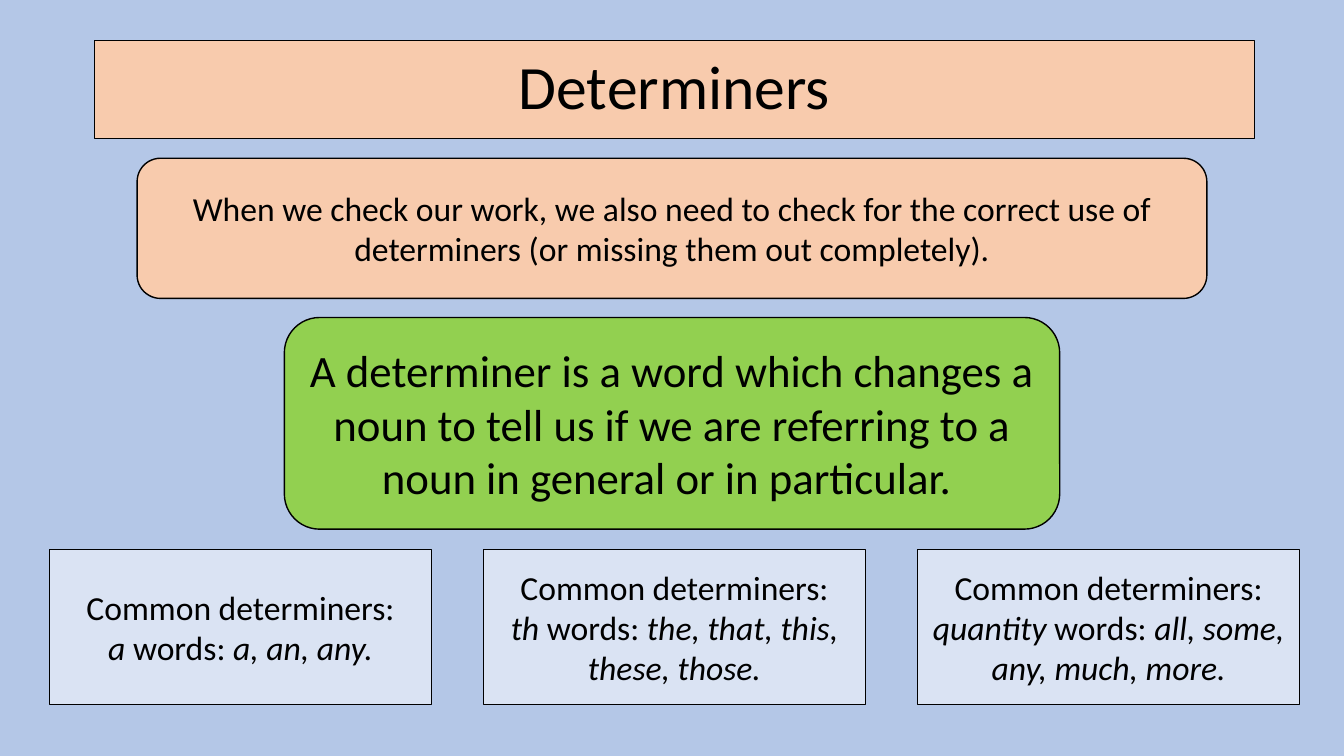
"""Build the Determiners slide."""
import pptx
import pptx.util
from pptx.dml.color import RGBColor
from pptx.enum.shapes import MSO_SHAPE
from pptx.enum.text import MSO_ANCHOR, PP_ALIGN
from pptx.util import Inches

BLACK = RGBColor(0x00, 0x00, 0x00)
SKY = RGBColor(0xB4, 0xC7, 0xE7)
PEACH = RGBColor(0xF8, 0xCB, 0xAD)
GREEN = RGBColor(0x92, 0xD0, 0x50)
PALE_BLUE = RGBColor(0xDA, 0xE3, 0xF3)

HEADING = "Determiners"
STATEMENTS = [
    ("When we check our work, we also need to check for the correct use of "
     "determiners (or missing them out completely).",
     (1.36, 1.57, 10.61, 1.39), PEACH, 24),
    ("A determiner is a word which changes a noun to tell us if we are "
     "referring to a noun in general or in particular. ",
     (2.82, 3.15, 7.69, 2.1), GREEN, 32),
]
EXAMPLE_HEADING = "Common determiners:"
EXAMPLES = [
    ("a", "a, an, any."),
    ("th", "the, that, this, these, those."),
    ("quantity", "all, some, any, much, more."),
]
EXAMPLE_LEFT, EXAMPLE_TOP = 0.49, 5.45
EXAMPLE_WIDTH, EXAMPLE_HEIGHT = 3.79, 1.54
EXAMPLE_STEP = 4.305


def style(box, fill, size, line_width=1):
    box.fill.solid()
    box.fill.fore_color.rgb = fill
    box.line.color.rgb = BLACK
    box.line.width = pptx.util.Pt(line_width)
    box.text_frame.word_wrap = True
    box.text_frame.vertical_anchor = MSO_ANCHOR.MIDDLE
    for paragraph in box.text_frame.paragraphs:
        paragraph.alignment = PP_ALIGN.CENTER
        for run in paragraph.runs:
            run.font.name = "Calibri"
            run.font.size = pptx.util.Pt(size)
            run.font.color.rgb = BLACK


def add_box(slide, preset, bounds, text):
    box = slide.shapes.add_shape(preset, *map(Inches, bounds))
    box.shadow.inherit = False
    box.text_frame.text = text
    return box


def main():
    deck = pptx.Presentation()
    deck.slide_width, deck.slide_height = Inches(13.33), Inches(7.5)
    slide = deck.slides.add_slide(deck.slide_layouts[5])
    slide.background.fill.solid()
    slide.background.fill.fore_color.rgb = SKY

    title = slide.shapes.title
    title.left, title.top = Inches(0.94), Inches(0.4)
    title.width, title.height = Inches(11.5), Inches(0.97)
    title.text_frame.text = HEADING
    title.text_frame.paragraphs[0].line_spacing = 0.9
    style(title, PEACH, 44, 0.75)

    for statement, bounds, fill, size in STATEMENTS:
        box = add_box(slide, MSO_SHAPE.ROUNDED_RECTANGLE, bounds, statement)
        style(box, fill, size)

    for column, (family, words) in enumerate(EXAMPLES):
        bounds = (EXAMPLE_LEFT + column * EXAMPLE_STEP, EXAMPLE_TOP,
                  EXAMPLE_WIDTH, EXAMPLE_HEIGHT)
        box = add_box(slide, MSO_SHAPE.RECTANGLE, bounds, EXAMPLE_HEADING)
        word_line = box.text_frame.add_paragraph()
        for text, italic in ((family, True), (" words: ", False), (words, True)):
            run = word_line.add_run()
            run.text = text
            run.font.italic = italic
        style(box, PALE_BLUE, 24)

    deck.save("out.pptx")


if __name__ == "__main__":
    main()
